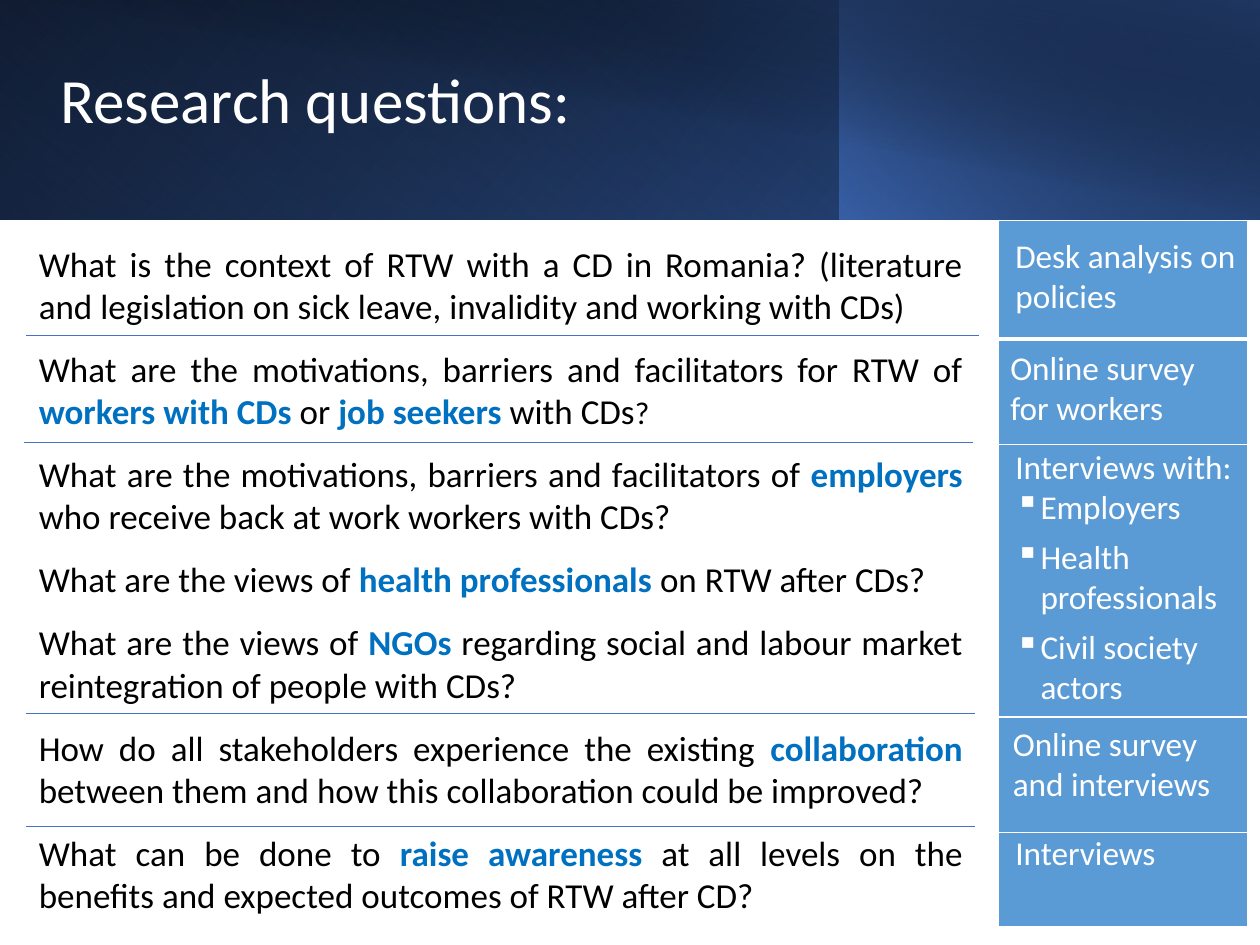
from lxml import etree
from pptx import Presentation
from pptx.dml.color import RGBColor
from pptx.enum.shapes import MSO_CONNECTOR, MSO_SHAPE
from pptx.enum.text import MSO_ANCHOR, PP_ALIGN
from pptx.oxml import parse_xml
from pptx.oxml.ns import qn
from pptx.util import Inches, Pt

STRAIGHT = MSO_CONNECTOR.STRAIGHT
RECTANGLE = MSO_SHAPE.RECTANGLE
MIDDLE = MSO_ANCHOR.MIDDLE
LEFT, JUSTIFY = PP_ALIGN.LEFT, PP_ALIGN.JUSTIFY
NAMESPACE = 'xmlns:a="http://schemas.openxmlformats.org/drawingml/2006/main"'
WHITE, BLACK, HIGHLIGHT = "FFFFFF", "000000", "0070C0"
CELL_BLUE, LINE_BLUE = "5B9BD5", "4472C4"


def color(hex_string):
    return RGBColor.from_string(hex_string)


def add_run(paragraph, text, size, hex_string, bold=False):
    run = paragraph.add_run()
    run.text = text
    formats = {"name": "Calibri", "size": Pt(size), "bold": bold}
    for name, value in formats.items():
        setattr(run.font, name, value)
    run.font.color.rgb = color(hex_string)


presentation = Presentation()
presentation.slide_width, presentation.slide_height = Inches(10), Inches(7.5)
slide = presentation.slides.add_slide(presentation.slide_layouts[5])
title = slide.shapes.title

# Header: layered gradients, each stop is (position, colour, opacity) in percent
header_layers = [
    (0, 10, 1.74, 0, True, 140, [(0, BLACK, 100), (100, "2F5597", 100)]),
    (0, 6.66, 1.74, 180, True, 230, [(20, "4472C4", 0), (100, "203864", 55)]),
    (6.66, 3.34, 1.74, 0, True, 220, [(0, "4472C4", 66), (100, BLACK, 30)]),
    (0.38, 9.62, 1.75, 0, False, 280, [(50, BLACK, 0), (99, "203864", 52)]),
]
for left, width, height, rotation, flipped, angle, stops in header_layers:
    shape = slide.shapes.add_shape(
        RECTANGLE, Inches(left), 0, Inches(width), Inches(height))
    shape.shadow.inherit = False
    shape.line.fill.background()
    shape.rotation = rotation
    properties = shape.element.spPr
    if flipped:
        properties.find(qn("a:xfrm")).set("flipH", "1")
    stop_xml = "".join(
        f'<a:gs pos="{position * 1000}"><a:srgbClr val="{stop_color}">'
        f'<a:alpha val="{opacity * 1000}"/></a:srgbClr></a:gs>'
        for position, stop_color, opacity in stops)
    properties.find(qn("a:prstGeom")).addnext(parse_xml(
        f'<a:gradFill {NAMESPACE} rotWithShape="1"><a:gsLst>{stop_xml}</a:gsLst>'
        f'<a:lin ang="{angle * 60000}" scaled="0"/></a:gradFill>'))

# Title, moved in front of the header
slide.shapes._spTree.append(title.element)
title.left, title.top = Inches(0.38), Inches(0.4)
title.width, title.height = Inches(8.4), Inches(0.84)
title.text_frame.vertical_anchor = MIDDLE
paragraph = title.text_frame.paragraphs[0]
paragraph.alignment, paragraph.line_spacing = LEFT, 0.9
add_run(paragraph, "Research questions:", 36, WHITE)

# Questions: every second part is highlighted
questions = [
    ["What is the context of RTW with a CD in Romania? (literature and "
     "legislation on sick leave, invalidity and working with CDs)"],
    ["What are the motivations, barriers and facilitators for RTW of ",
     "workers with CDs", " or ", "job seekers ", "with CDs"],
    ["What are the motivations, barriers and facilitators of ", "employers ",
     "who receive back at work workers with CDs?"],
    ["What are the views of ", "health professionals ", "on RTW after CDs?"],
    ["What are the views of", " NGOs ",
     "regarding social and labour market reintegration of people with CDs?"],
    ["How do all stakeholders experience the existing ", "collaboration",
     " between them and how this collaboration could be improved?"],
    ["What can be done to ", "raise awareness ",
     "at all levels on the benefits and expected outcomes of RTW after CD?"],
]
question_box = slide.shapes.add_textbox(
    Inches(0.21), Inches(2.07), Inches(7.53), Inches(5.05))
frame = question_box.text_frame
frame.word_wrap, frame.vertical_anchor = True, MIDDLE
for number, parts in enumerate(questions):
    paragraph = frame.add_paragraph() if number else frame.paragraphs[0]
    paragraph.alignment, paragraph.space_after = JUSTIFY, Pt(12)
    for index, part in enumerate(parts):
        highlighted = index % 2 == 1
        add_run(paragraph, part, 20, HIGHLIGHT if highlighted else BLACK, highlighted)
add_run(frame.paragraphs[1], "? ", 18, BLACK)

# Method column
row_heights = [0.94, 0.84, 2.16, 0.92, 0.75]
table_frame = slide.shapes.add_table(
    len(row_heights), 1, Inches(7.92), Inches(1.75), Inches(1.98), Inches(5.6))
table = table_frame.table
for number, height in enumerate(row_heights):
    table.rows[number].height = Inches(height)
    cell = table.cell(number, 0)
    cell.fill.solid()
    cell.fill.fore_color.rgb = color(CELL_BLUE)
    widths = {"lnL": 1, "lnR": 1, "lnT": 3 if number == 1 else 1,
              "lnB": 3 if number == 0 else 1}
    for index, (side, width) in enumerate(widths.items()):
        cell._tc.get_or_add_tcPr().insert(index, parse_xml(
            f'<a:{side} {NAMESPACE} w="{Pt(width)}"><a:solidFill>'
            f'<a:srgbClr val="{WHITE}"/></a:solidFill></a:{side}>'))

# Separators between the questions
for left, right, top in [(0.21, 7.77, 2.66), (0.19, 7.72, 3.51),
                         (0.21, 7.74, 5.66), (0.21, 7.74, 6.56)]:
    line = slide.shapes.add_connector(
        STRAIGHT, Inches(left), Inches(top), Inches(right), Inches(top))
    line.line.color.rgb = color(LINE_BLUE)
    line.line.width = Pt(0.5)
    etree.SubElement(line.element.spPr, qn("a:effectLst"))

# Methods: the first paragraph is plain, the others are bullets
methods = [
    (7.92, 2.71, 1.98, 0.74, ["Online survey for workers"]),
    (7.96, 3.49, 1.95, 2.19, ["Interviews with:", "Employers",
                              "Health professionals", "Civil society actors"]),
    (7.94, 5.69, 1.85, 0.74, ["Online survey and interviews"]),
    (7.96, 6.56, 1.72, 0.42, ["Interviews"]),
    (7.96, 1.82, 1.95, 0.74, ["Desk analysis on policies"]),
]
for left, top, width, height, texts in methods:
    box = slide.shapes.add_textbox(
        Inches(left), Inches(top), Inches(width), Inches(height))
    frame = box.text_frame
    frame.word_wrap = True
    for number, text in enumerate(texts):
        paragraph = frame.add_paragraph() if number else frame.paragraphs[0]
        add_run(paragraph, text, 19, WHITE)
        if number:
            paragraph.space_before = Pt(6 if number > 1 else 0)
            properties = paragraph._p.get_or_add_pPr()
            properties.set("marL", str(Inches(0.2)))
            properties.set("indent", str(Inches(-0.2)))
            etree.SubElement(properties, qn("a:buChar")).set("char", "▪")

presentation.save("out.pptx")
